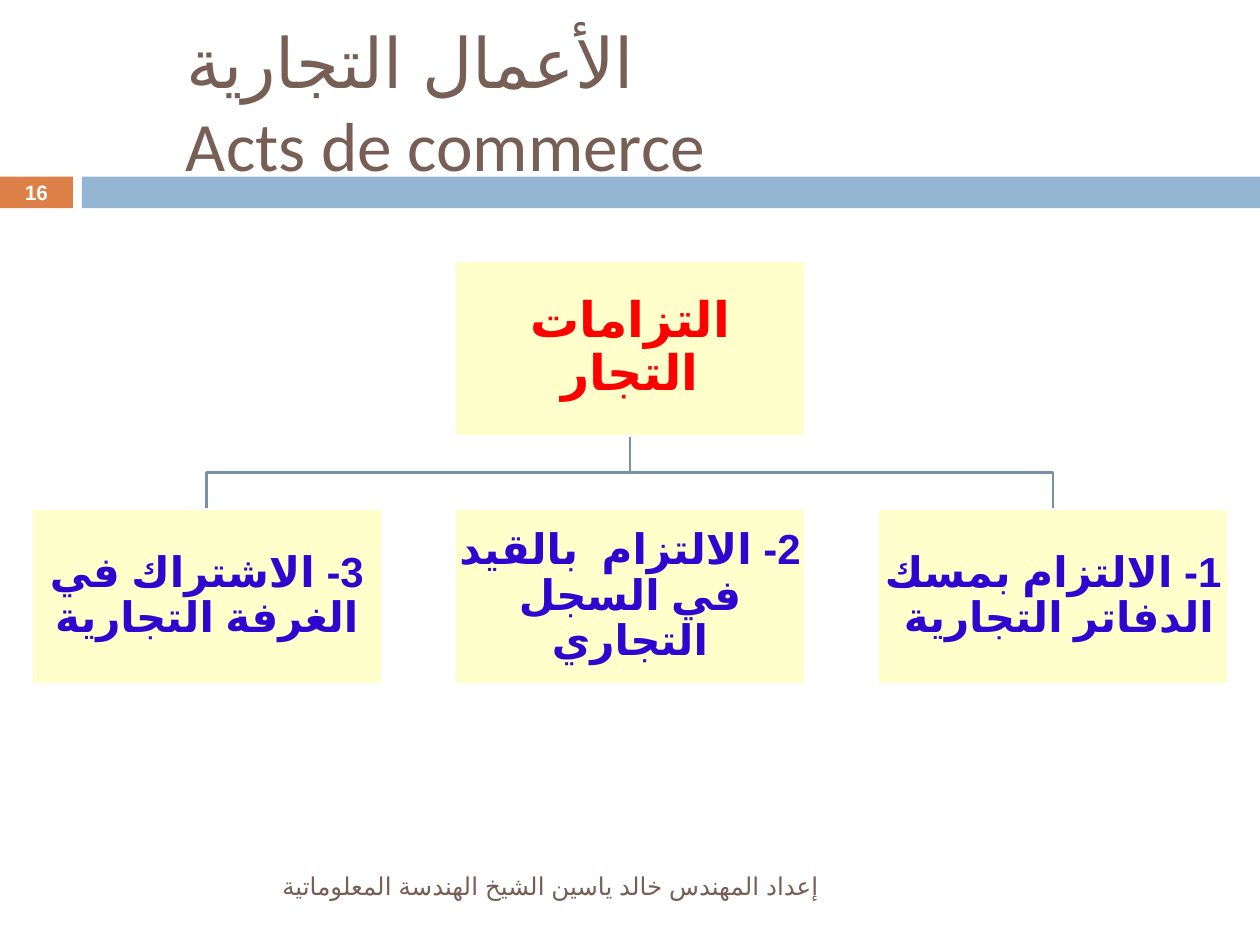
"""Build the slide on merchants' obligations as a small organisation chart."""
from pptx import Presentation
from pptx.dml.color import RGBColor
from pptx.enum.lang import MSO_LANGUAGE_ID as Language
from pptx.enum.shapes import MSO_SHAPE as Preset
from pptx.enum.text import MSO_ANCHOR as Anchor, PP_ALIGN as Align
from pptx.oxml.ns import qn
from pptx.util import Cm, Pt
from lxml.etree import SubElement


def color(value):
    return RGBColor.from_string(value)


def write(shape, text, size, font, ink, align, bold=False, inset=None):
    frame = shape.text_frame
    frame.word_wrap = True
    frame.vertical_anchor = Anchor.MIDDLE
    if inset is not None:
        frame.margin_left = frame.margin_right = Cm(inset)
        frame.margin_top = frame.margin_bottom = Cm(inset)
    frame.text = text
    paragraph = frame.paragraphs[0]
    paragraph.alignment = align
    paragraph._p.get_or_add_pPr().set("rtl", "1")
    for run in paragraph.runs:
        run.font.size = Pt(size)
        run.font.bold = bold
        run.font.name = font
        run.font.language_id = Language.ARABIC
        run.font.color.rgb = color(ink)
        SubElement(run._r.get_or_add_rPr(), qn("a:cs")).set("typeface", "Arial")
    return frame


prs = Presentation()
prs.slide_width, prs.slide_height = Cm(25.4), Cm(19.05)
slide = prs.slides.add_slide(prs.slide_layouts[6])
shapes = slide.shapes

for left, width, fill in [(0, 1.47, "DD8047"), (1.65, 23.75, "94B6D2")]:
    band = shapes.add_shape(Preset.RECTANGLE, Cm(left), Cm(3.56), Cm(width), Cm(0.64))
    band.shadow.inherit = False
    band.fill.solid()
    band.fill.fore_color.rgb = color(fill)
    band.line.fill.background()

title = shapes.add_textbox(Cm(3.5), Cm(1.52), Cm(22.66), Cm(2.74))
title_frame = write(title, "الأعمال التجارية\vActs de commerce", 39.6, "Calibri", "775F55", Align.LEFT)
title_frame.vertical_anchor = Anchor.BOTTOM
title_frame.margin_bottom = Cm(0.53)

footer = shapes.add_textbox(Cm(1.7), Cm(17.35), Cm(15.06), Cm(1.02))
write(footer, "إعداد المهندس خالد ياسين الشيخ الهندسة المعلوماتية", 14, "Arial", "775F55", Align.RIGHT)

page_number = shapes.add_textbox(Cm(0), Cm(3.53), Cm(1.47), Cm(0.69))
write(page_number, "16", 11.9, "Calibri", "FFFFFF", Align.CENTER, bold=True, inset=0)

box_width, box_height = 7.06, 3.53
first_left, pitch = 0.64, 8.53
root_top, duty_top = 5.26, 10.26
root_bottom = root_top + box_height
middle = (root_bottom + duty_top) / 2
centers = [first_left + column * pitch + box_width / 2 for column in range(3)]

for center in (centers[2], centers[0]):
    branch_path = shapes.build_freeform(Cm(centers[1]), Cm(root_bottom))
    corners = [(centers[1], middle), (center, middle), (center, duty_top)]
    branch_path.add_line_segments([(Cm(x), Cm(y)) for x, y in corners], close=False)
    branch = branch_path.convert_to_shape()
    branch.shadow.inherit = False
    branch.fill.background()
    branch.line.color.rgb = color("7792A8")
    branch.line.width = Pt(1.5)

boxes = [
    (1, root_top, "التزامات التجار", 28, "FF0000"),
    (0, duty_top, "3- الاشتراك في الغرفة التجارية", 24, "2D07CF"),
    (1, duty_top, "2- الالتزام  بالقيد في السجل التجاري", 24, "2D07CF"),
    (2, duty_top, "1- الالتزام بمسك الدفاتر التجارية ", 24, "2D07CF"),
]
for column, top, text, size, ink in boxes:
    box = shapes.add_shape(Preset.RECTANGLE, Cm(first_left + column * pitch), Cm(top),
                           Cm(box_width), Cm(box_height))
    box.shadow.inherit = False
    box.fill.solid()
    box.fill.fore_color.rgb = color("FFFFCC")
    box.line.color.rgb = color("FFFFFF")
    box.line.width = Pt(1.5)
    box_frame = write(box, text, size, "Times New Roman", ink, Align.CENTER, bold=True, inset=0.05)
    box_frame.paragraphs[0].line_spacing = 0.9

prs.save("out.pptx")
